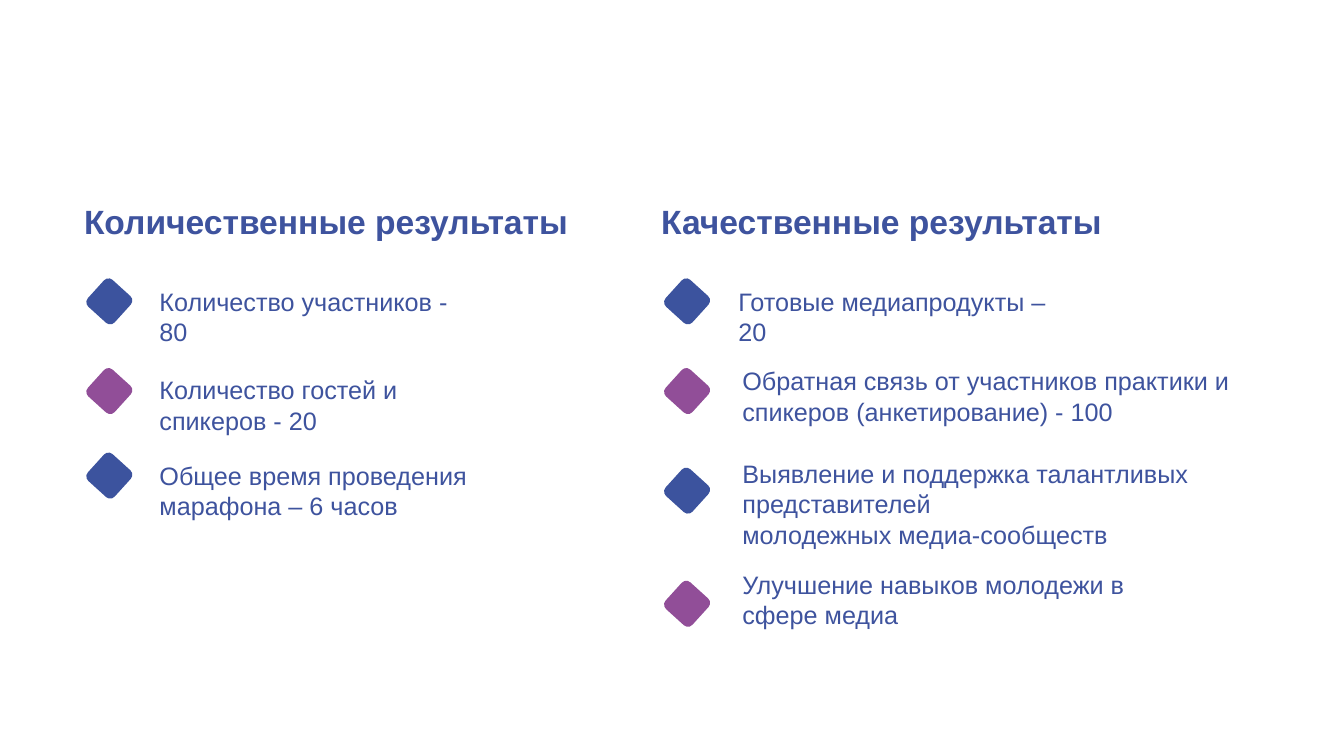
from dataclasses import dataclass

from pptx import Presentation
from pptx.dml.color import RGBColor
from pptx.enum.shapes import MSO_SHAPE
from pptx.enum.text import MSO_AUTO_SIZE, PP_ALIGN
from pptx.util import Cm, Pt


@dataclass(frozen=True)
class Theme:
    """Colours, font and type sizes of the slide."""
    text: RGBColor = RGBColor(0x3E, 0x53, 0x9E)
    markers: tuple = (RGBColor(0x3C, 0x53, 0x9E), RGBColor(0x91, 0x4E, 0x98))
    font: str = "Arial"
    heading: Pt = Pt(24)
    body: Pt = Pt(18)


@dataclass(frozen=True)
class Result:
    """A result with its marker and text placement in centimetres."""
    lines: tuple
    top: float
    text_left: float = 1.47
    text_rise: float = 0.05
    width: float = 8.26
    height: float = 1.8


THEME = Theme()
MARKER = 0.91

QUANTITATIVE = (
    Result(("Количество участников - 80",), 2.21),
    Result(("Количество гостей и спикеров - 20",), 4.47, text_rise=0.08),
    Result(("Общее время проведения марафона – 6 часов",), 6.6),
)
QUALITATIVE = (
    Result(("Готовые медиапродукты – 20",), 2.21, 1.5),
    Result(("Обратная связь от участников практики и спикеров (анкетирование) - 100",),
           4.47, 1.6, 0.31, 13.92),
    Result(("Выявление и поддержка талантливых представителей",
            "молодежных медиа-сообществ"), 6.98, 1.6, 0.48, 13.11, 2.57),
    Result(("Улучшение навыков молодежи в", "сфере медиа"),
           9.83, 1.6, 0.54, 13.11),
)


def add_text(s, box, lines, size, bold=False, wrap=True, align=PP_ALIGN.LEFT):
    """Add a text box with one paragraph per line."""
    tf = s.shapes.add_textbox(*map(Cm, box)).text_frame
    tf.word_wrap = wrap
    tf.auto_size = MSO_AUTO_SIZE.SHAPE_TO_FIT_TEXT
    tf.text = "\n".join(lines)
    for p in tf.paragraphs:
        p.alignment = align
        p.font.name = THEME.font
        p.font.size = size
        p.font.bold = bold
        p.font.color.rgb = THEME.text


def add_marker(s, left, top, color):
    """Add a rounded square turned into a diamond."""
    sp = s.shapes.add_shape(MSO_SHAPE.ROUNDED_RECTANGLE,
                            Cm(left), Cm(top), Cm(MARKER), Cm(MARKER))
    sp.rotation = 42.2
    sp.shadow.inherit = False
    sp.fill.solid()
    sp.fill.fore_color.rgb = color
    sp.line.fill.background()


def add_column(s, box, heading, results):
    """Add a heading and its marked results inside the given box."""
    left, top, width, heading_height = box
    add_text(s, (left, top, width, heading_height), (heading,), THEME.heading,
             bold=True, wrap=False, align=PP_ALIGN.CENTER)
    marker_left = left + 0.5
    for i, result in enumerate(results):
        y = top + result.top
        add_marker(s, marker_left, y, THEME.markers[i % len(THEME.markers)])
        add_text(s, (marker_left + result.text_left, y - result.text_rise,
                     result.width, result.height), result.lines, THEME.body)


def main():
    """Build and save the results slide."""
    prs = Presentation()
    prs.slide_width, prs.slide_height = Cm(33.87), Cm(19.05)
    s = prs.slides.add_slide(prs.slide_layouts[6])
    add_column(s, (1.8, 4.93, 12.83, 1.27), "Количественные результаты", QUANTITATIVE)
    add_column(s, (16.36, 4.93, 11.71, 1.27), "Качественные результаты", QUALITATIVE)
    prs.save("out.pptx")


if __name__ == "__main__":
    main()
